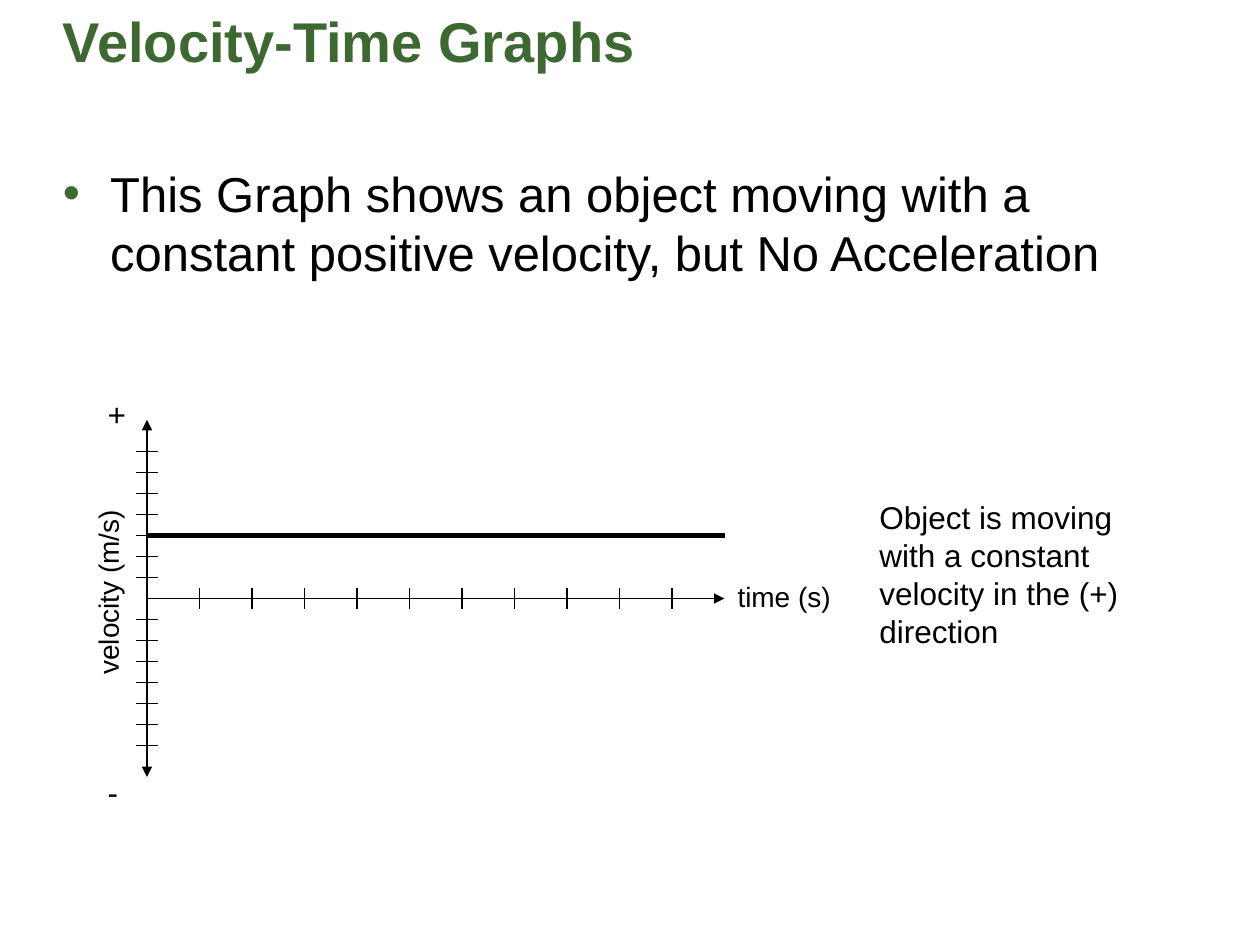
"""Build a slide that explains a velocity-time graph of constant positive velocity."""
from dataclasses import dataclass

from lxml import etree
from pptx import Presentation
from pptx.dml.color import RGBColor
from pptx.enum.shapes import MSO_CONNECTOR
from pptx.enum.text import MSO_ANCHOR, PP_ALIGN
from pptx.oxml.ns import qn
from pptx.shapes.shapetree import GroupShapes, SlideShapes
from pptx.util import Emu, Pt

STRAIGHT = MSO_CONNECTOR.STRAIGHT
TOP = MSO_ANCHOR.TOP
LEFT, CENTER = PP_ALIGN.LEFT, PP_ALIGN.CENTER
EMU_PER_PX = 9525
Shapes = SlideShapes | GroupShapes


@dataclass(frozen=True)
class Theme:
    font: str = "Arial"
    accent: str = "3D6832"
    ink: str = "000000"
    paper: str = "FFFFFF"
    title: int = 32
    body: int = 28
    note: int = 18
    axis: int = 16
    thin: float = 0.75
    thick: float = 3


@dataclass(frozen=True)
class Box:
    left: int
    top: int
    width: int
    height: int


@dataclass(frozen=True)
class Segment:
    x1: int
    y1: int
    x2: int
    y2: int
    width: float
    arrows: tuple[str, ...] = ()


@dataclass(frozen=True)
class Label:
    wording: str
    box: Box
    size: int
    align: PP_ALIGN = LEFT
    rotation: int = 0


THEME = Theme()
ORIGIN_X, ORIGIN_Y = 112, 456
AXIS_TOP, AXIS_BOTTOM, AXIS_RIGHT = 320, 592, 552
TICK_HALF, VELOCITY_STEP, TIME_STEP = 8, 16, 40
VELOCITY_TICKS, TIME_TICKS, CONSTANT_VELOCITY = 7, 10, 3

AXES = [
    Segment(ORIGIN_X, AXIS_TOP, ORIGIN_X, AXIS_BOTTOM, THEME.thin, ("headEnd", "tailEnd")),
    Segment(ORIGIN_X, ORIGIN_Y, AXIS_RIGHT, ORIGIN_Y, THEME.thin, ("tailEnd",)),
]
AXIS_LABELS = [
    Label("time (s)", Box(552, 437, 96, 35), THEME.axis),
    Label("velocity (m/s)", Box(6, 434, 152, 35), THEME.axis, CENTER, 270),
    Label("+", Box(72, 296, 40, 38), THEME.note),
    Label("-", Box(72, 584, 40, 38), THEME.note),
]


def px(length: int) -> Emu:
    return Emu(length * EMU_PER_PX)


def add_text(shapes: Shapes, wording: str, box: Box, *, size: int, color: str = THEME.ink,
             bold: bool = False, align: PP_ALIGN = LEFT, rotation: int = 0,
             inset: int = 10, bullet_indent: int = 0) -> None:
    holder = shapes.add_textbox(px(box.left), px(box.top), px(box.width), px(box.height))
    holder.rotation = rotation
    frame = holder.text_frame
    frame.word_wrap = True
    frame.vertical_anchor = TOP
    frame.margin_left = px(inset)
    paragraph = frame.paragraphs[0]
    paragraph.alignment = align
    run = paragraph.add_run()
    run.text = wording
    run.font.name = THEME.font
    run.font.size = Pt(size)
    run.font.bold = bold
    run.font.color.rgb = RGBColor.from_string(color)
    if bullet_indent:
        properties = paragraph._p.get_or_add_pPr()
        properties.set("marL", str(px(bullet_indent)))
        properties.set("indent", str(-px(bullet_indent)))
        bullet_color = etree.SubElement(properties, qn("a:buClr"))
        etree.SubElement(bullet_color, qn("a:srgbClr"), val=THEME.accent)
        etree.SubElement(properties, qn("a:buFont"), typeface=THEME.font)
        etree.SubElement(properties, qn("a:buChar"), char="•")


def add_segment(shapes: Shapes, segment: Segment) -> None:
    connector = shapes.add_connector(STRAIGHT, px(segment.x1), px(segment.y1),
                                     px(segment.x2), px(segment.y2))
    connector.line.width = Pt(segment.width)
    connector.line.color.rgb = RGBColor.from_string(THEME.ink)
    outline = connector.line._get_or_add_ln()
    for end in segment.arrows:
        etree.SubElement(outline, qn(f"a:{end}"), type="triangle")
    etree.SubElement(connector._element.spPr, qn("a:effectLst"))


def tick_marks() -> list[Segment]:
    levels = [ORIGIN_Y - n * VELOCITY_STEP
              for n in range(-VELOCITY_TICKS, VELOCITY_TICKS + 1) if n]
    times = [ORIGIN_X + n * TIME_STEP for n in range(1, TIME_TICKS + 1)]
    return [
        *(Segment(ORIGIN_X - TICK_HALF, y, ORIGIN_X + TICK_HALF, y, THEME.thin) for y in levels),
        *(Segment(x, ORIGIN_Y - TICK_HALF, x, ORIGIN_Y + TICK_HALF, THEME.thin) for x in times),
    ]


def add_axes(shapes: SlideShapes) -> None:
    graph = shapes.add_group_shape().shapes
    for segment in AXES + tick_marks():
        add_segment(graph, segment)
    for label in AXIS_LABELS:
        add_text(graph, label.wording, label.box, size=label.size,
                 align=label.align, rotation=label.rotation)


def main() -> None:
    deck = Presentation()
    deck.slide_width, deck.slide_height = px(960), px(720)
    slide = deck.slides.add_slide(deck.slide_layouts[6])
    slide.background.fill.solid()
    slide.background.fill.fore_color.rgb = RGBColor.from_string(THEME.paper)
    shapes = slide.shapes
    add_text(shapes, "Velocity-Time Graphs", Box(0, 0, 960, 60), size=THEME.title,
             color=THEME.accent, bold=True, inset=48)
    add_text(shapes, "This Graph shows an object moving with a constant positive velocity, "
             "but No Acceleration", Box(38, 120, 864, 537), size=THEME.body, bullet_indent=36)
    add_axes(shapes)
    velocity_y = ORIGIN_Y - CONSTANT_VELOCITY * VELOCITY_STEP
    add_segment(shapes, Segment(ORIGIN_X, velocity_y, AXIS_RIGHT, velocity_y, THEME.thick))
    add_text(shapes, "Object is moving with a constant velocity in the (+) direction",
             Box(660, 375, 224, 126), size=THEME.note)
    deck.save("out.pptx")


if __name__ == "__main__":
    main()
